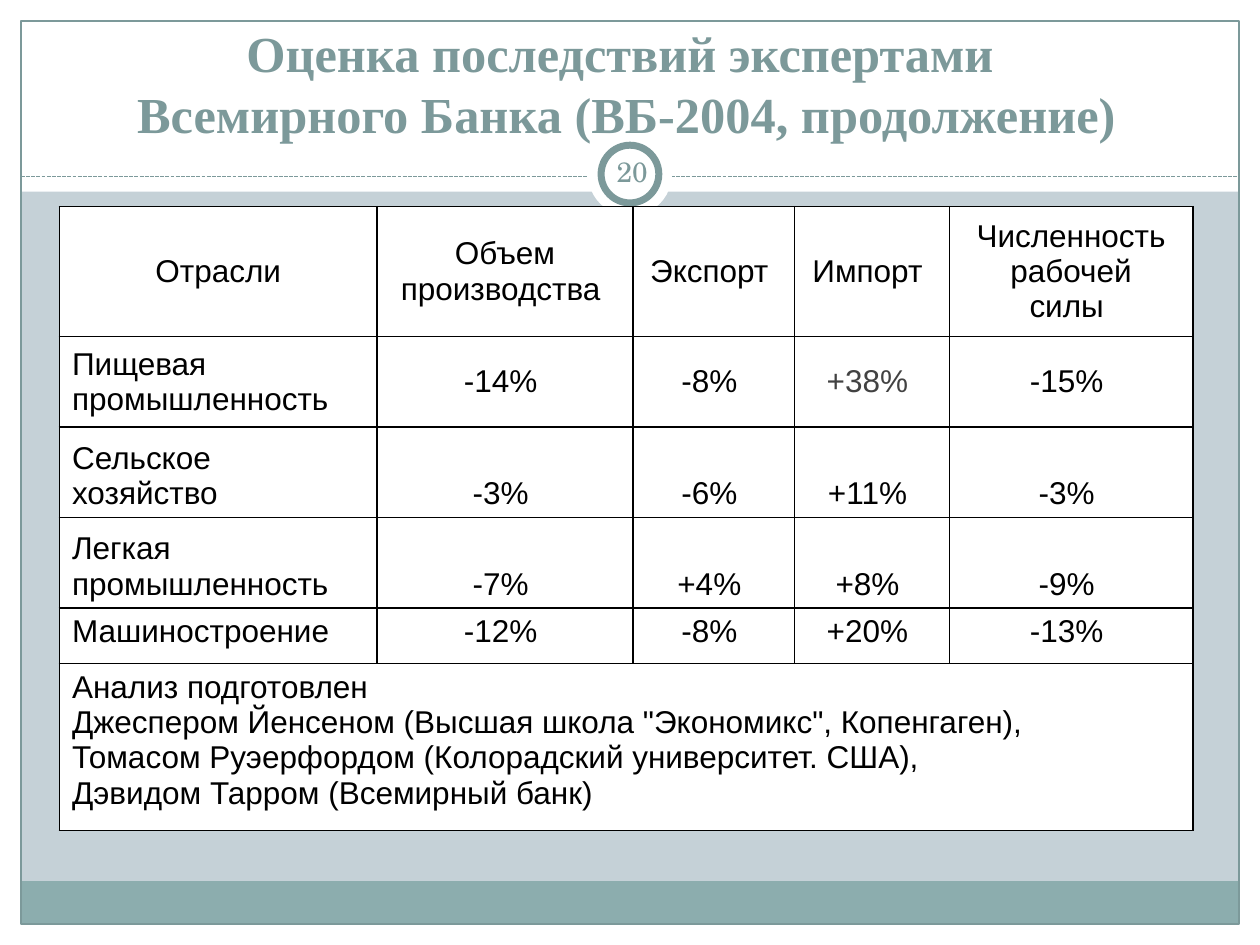
from pptx import Presentation
from pptx.dml.color import RGBColor
from pptx.enum.dml import MSO_LINE_DASH_STYLE as Dash
from pptx.enum.shapes import MSO_CONNECTOR as Connector, MSO_SHAPE as Shape
from pptx.enum.text import MSO_ANCHOR as Anchor, MSO_AUTO_SIZE as AutoSize, PP_ALIGN as Align
from pptx.oxml.ns import qn
from pptx.util import Pt
from lxml.etree import SubElement

COLORS = {
    "page": "C5D1D7",
    "paper": "FFFFFF",
    "teal": "7C999A",
    "footer": "8CADAE",
    "ink": "000000",
    "muted": "424242",
}
WIDTH, HEIGHT = 720, 540
MARGIN = 12
HEADER_HEIGHT = 109.5
RULE_Y = 100.8
TITLE_LINES = ["Оценка последствий экспертами ", "Всемирного Банка (ВБ-2004, продолжение)"]
COLUMN_WIDTHS = [181.5, 146.25, 92.25, 88.5, 139.25]
ROW_HEIGHTS = [74.25, 51.75, 51.75, 51.75, 31.75, 95.25]
ROW_ANCHORS = [Anchor.MIDDLE, Anchor.MIDDLE, Anchor.BOTTOM, Anchor.BOTTOM, Anchor.TOP, Anchor.TOP]
ROWS = [
    ["Отрасли", "Объем\nпроизводства ", "Экспорт ", "Импорт ", "Численность\nрабочей\nсилы "],
    ["Пищевая\nпромышленность", "-14% ", "-8% ", "+38% ", "-15% "],
    ["Сельское\nхозяйство", "-3% ", "-6% ", "+11% ", "-3% "],
    ["Легкая\nпромышленность", "-7% ", "+4% ", "+8% ", "-9% "],
    ["Машиностроение", "-12% ", "-8% ", "+20% ", "-13% "],
    [
        "Анализ подготовлен  \n"
        "Джеспером Йенсеном (Высшая школа \"Экономикс\", Копенгаген),\n"
        "Томасом Руэерфордом (Колорадский университет. США),\n"
        "Дэвидом Тарром (Всемирный банк) "
    ],
]
MUTED_CELL = (1, 3)


def rgb(name):
    """Return the named palette colour."""
    return RGBColor.from_string(COLORS[name])


def add_run(paragraph, text, font, size, color, bold=False):
    """Append one formatted run to a paragraph."""
    run = paragraph.add_run()
    run.text = text
    run.font.name, run.font.size, run.font.bold = font, Pt(size), bold
    run.font.color.rgb = rgb(color)


def add_panel(slide, kind, box, fill=None, line=None, weight=0.75):
    """Add a flat shape with an optional fill and outline."""
    panel = slide.shapes.add_shape(kind, *map(Pt, box))
    panel.shadow.inherit = False
    if fill:
        panel.fill.solid()
        panel.fill.fore_color.rgb = rgb(fill)
    else:
        panel.fill.background()
    if line:
        panel.line.color.rgb = rgb(line)
        panel.line.width = Pt(weight)
    else:
        panel.line.fill.background()


def add_frame(slide, left, top, width, height):
    """Draw the white margins, header, footer bar, outline and dashed rule."""
    right, bottom = left + width - MARGIN, top + height - MARGIN
    inner_width, inner_height = width - 2 * MARGIN, height - 2 * MARGIN
    margins = [
        (left, bottom, width, MARGIN),
        (left, top, width, HEADER_HEIGHT),
        (left, top, MARGIN, height),
        (right, top, MARGIN, height),
    ]
    for box in margins:
        add_panel(slide, Shape.RECTANGLE, box, "paper")
    add_panel(slide, Shape.RECTANGLE, (left + MARGIN, bottom - 24.5, inner_width, 24.5), "footer")
    outline = (left + MARGIN, top + MARGIN, inner_width, inner_height)
    add_panel(slide, Shape.RECTANGLE, outline, line="teal")
    rule_y = Pt(top + RULE_Y)
    rule = slide.shapes.add_connector(Connector.STRAIGHT, Pt(left + MARGIN), rule_y, Pt(right), rule_y)
    rule.line.color.rgb = rgb("teal")
    rule.line.width = Pt(0.75)
    rule.line.dash_style = Dash.SQUARE_DOT
    SubElement(rule.element.spPr, qn("a:effectLst"))


def add_title(slide, left, top, width, height):
    """Place the two-line heading above the frame."""
    title = slide.shapes.title
    title.left, title.top, title.width, title.height = map(Pt, (left, top, width, height))
    title.element.getparent().append(title.element)
    frame = title.text_frame
    frame.auto_size = AutoSize.NONE
    frame.vertical_anchor = Anchor.BOTTOM
    heading = frame.paragraphs[0]
    heading.alignment = Align.CENTER
    for index, text in enumerate(TITLE_LINES):
        if index:
            heading.add_line_break()
        add_run(heading, text, "Times New Roman", 28.8, "teal", bold=True)


def add_page_badge(slide, left, top, size):
    """Draw the ringed page number inside a square box."""
    add_panel(slide, Shape.OVAL, (left, top, size, size), "paper")
    inset = 7.5
    ring = size - 2 * inset
    add_panel(slide, Shape.OVAL, (left + inset, top + inset, ring, ring), "paper", "teal", 4)
    number = slide.shapes.add_textbox(Pt(left + 7.2), Pt(top + 5), Pt(36), Pt(34.5)).text_frame
    number.word_wrap = True
    number.vertical_anchor = Anchor.MIDDLE
    number.margin_left = number.margin_right = Pt(3.6)
    number.margin_top = number.margin_bottom = Pt(3.6)
    number.paragraphs[0].alignment = Align.CENTER
    add_run(number.paragraphs[0], "20", "TeX Gyre Schola", 16, "teal")


def set_borders(cell):
    """Give a cell thin black borders on all sides."""
    properties = cell._tc.get_or_add_tcPr()
    for index, side in enumerate(("a:lnL", "a:lnR", "a:lnT", "a:lnB")):
        border = properties.makeelement(qn(side), {"w": str(Pt(1))})
        properties.insert(index, border)
        fill = SubElement(border, qn("a:solidFill"))
        SubElement(fill, qn("a:srgbClr"), val=COLORS["ink"])


def fill_cell(cell, text, anchor, alignment, color):
    """Write the lines of a cell as separate paragraphs."""
    cell.vertical_anchor = anchor
    for index, line in enumerate(text.split("\n")):
        frame = cell.text_frame
        paragraph = frame.add_paragraph() if index else frame.paragraphs[0]
        paragraph.alignment = alignment
        add_run(paragraph, line, "Arial", 18, color)


def add_impact_table(slide, left, top):
    """Build the table of effects by industry with its merged source row."""
    box = map(Pt, (left, top, sum(COLUMN_WIDTHS), sum(ROW_HEIGHTS)))
    table = slide.shapes.add_table(len(ROWS), len(COLUMN_WIDTHS), *box).table
    for column, width in zip(table.columns, COLUMN_WIDTHS):
        column.width = Pt(width)
    for row, height in zip(table.rows, ROW_HEIGHTS):
        row.height = Pt(height)
    last = len(ROWS) - 1
    table.cell(last, 0).merge(table.cell(last, len(COLUMN_WIDTHS) - 1))
    for cell in table.iter_cells():
        cell.fill.solid()
        cell.fill.fore_color.rgb = rgb("paper")
        set_borders(cell)
    for r, (texts, anchor) in enumerate(zip(ROWS, ROW_ANCHORS)):
        for c, text in enumerate(texts):
            alignment = Align.CENTER if c or r == 0 else Align.LEFT
            if r == last:
                alignment = Align.JUSTIFY
            color = "muted" if (r, c) == MUTED_CELL else "ink"
            fill_cell(table.cell(r, c), text, anchor, alignment, color)


def main():
    """Build and save the presentation."""
    deck = Presentation()
    deck.slide_width, deck.slide_height = Pt(WIDTH), Pt(HEIGHT)
    slide = deck.slides.add_slide(deck.slide_layouts[5])
    slide.background.fill.solid()
    slide.background.fill.fore_color.rgb = rgb("page")
    add_frame(slide, 0, 0, WIDTH, HEIGHT)
    add_page_badge(slide, 336, 75.5, 48)
    add_title(slide, 34, 11.5, 648, 74)
    add_impact_table(slide, 34, 118)
    deck.save("out.pptx")


if __name__ == "__main__":
    main()
